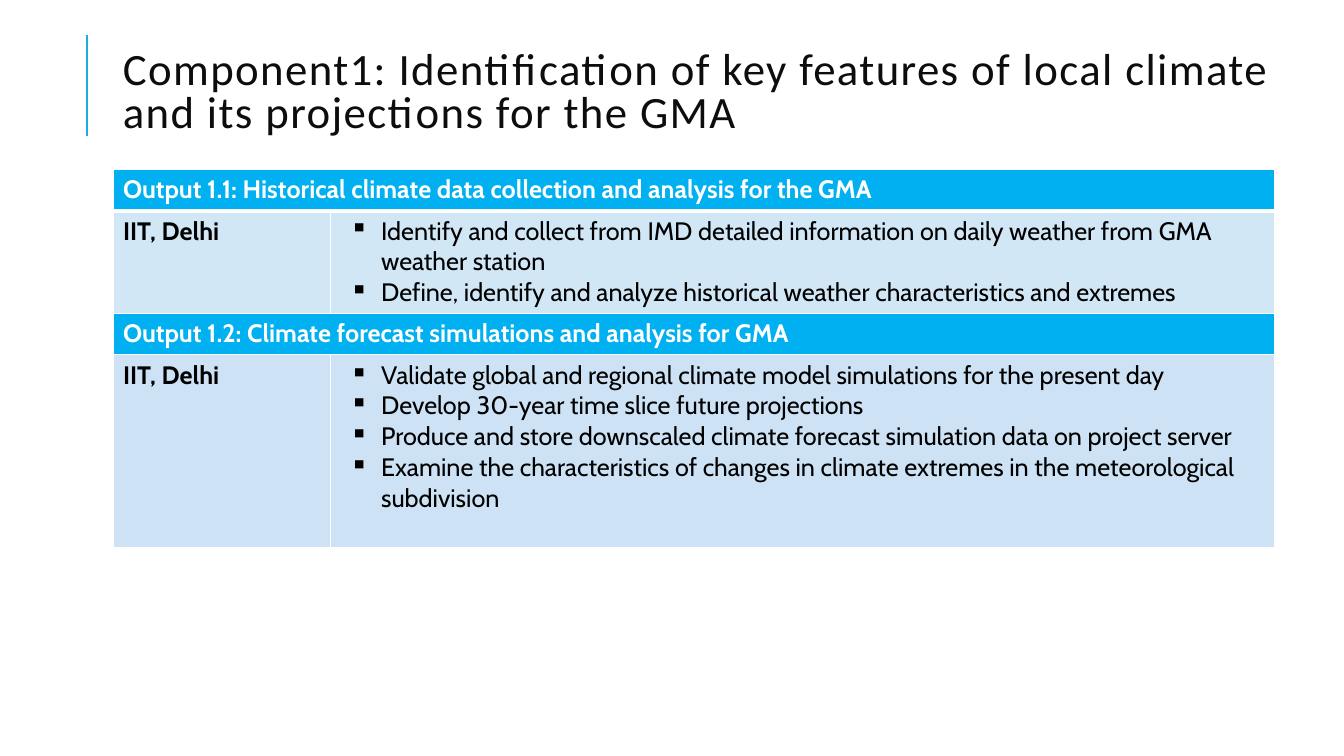
from lxml.etree import SubElement
from pptx import Presentation
from pptx.dml.color import RGBColor
from pptx.enum.shapes import MSO_CONNECTOR
from pptx.enum.text import MSO_ANCHOR
from pptx.oxml import parse_xml
from pptx.oxml.ns import nsdecls, qn
from pptx.util import Inches, Pt

COLORS = {
    "accent": "1CADE4",
    "title": "0D0D0D",
    "heading": "00B0F0",
    "history": "D1E7F6",
    "forecast": "CDE3F5",
    "body": "000000",
    "white": "FFFFFF",
}

TITLE = ("Component1: Identification of key features of local climate "
         "and its projections for the GMA")

# Heading, institution, activities, fill, heading height, activities height
OUTPUTS = [
    ("Output 1.1: Historical climate data collection and analysis for the GMA",
     "IIT, Delhi",
     ["Identify and collect from IMD detailed information on daily weather "
      "from GMA weather station",
      "Define, identify and analyze historical weather characteristics and extremes"],
     "history", 0.41, 1.02),
    ("Output 1.2: Climate forecast simulations and analysis for GMA",
     "IIT, Delhi",
     ["Validate global and regional climate model simulations for the present day",
      "Develop 30-year time slice future projections",
      "Produce and store downscaled climate forecast simulation data on project server",
      "Examine the characteristics of changes in climate extremes in the "
      "meteorological subdivision"],
     "forecast", 0.41, 1.91),
]


def rgb(name):
    return RGBColor.from_string(COLORS[name])


def add_run(paragraph, text, font_name, size, color, bold=False):
    run = paragraph.add_run()
    run.text = text
    run.font.name = font_name
    run.font.size = Pt(size)
    run.font.bold = bold
    run.font.color.rgb = rgb(color)
    return run


def add_bullet(paragraph):
    properties = paragraph._p.get_or_add_pPr()
    properties.set("marL", str(Inches(0.4)))
    properties.set("indent", str(Inches(-0.31)))
    SubElement(properties, qn("a:buChar")).set("char", "▪")


def style_cell(cell, fill, bottom_width=1):
    cell.fill.solid()
    cell.fill.fore_color.rgb = rgb(fill)
    properties = cell._tc.get_or_add_tcPr()
    for position, side in enumerate("LRTB"):
        width = Pt(bottom_width if side == "B" else 1)
        properties.insert(position, parse_xml(
            f'<a:ln{side} {nsdecls("a")} w="{width}"><a:solidFill>'
            f'<a:srgbClr val="{COLORS["white"]}"/></a:solidFill></a:ln{side}>'))


def add_title(slide, left, top, width, height):
    # Accent rule beside the title
    rule_x = left - Inches(0.26)
    rule = slide.shapes.add_connector(
        MSO_CONNECTOR.STRAIGHT, rule_x, top + Inches(1.13), rule_x, top + Inches(0.13))
    rule.line.color.rgb = rgb("accent")
    rule.line.width = Pt(1.5)
    SubElement(rule._element.spPr, qn("a:effectLst"))

    # Title text
    frame = slide.shapes.add_textbox(left, top, width, height).text_frame
    frame.word_wrap = True
    frame.vertical_anchor = MSO_ANCHOR.MIDDLE
    paragraph = frame.paragraphs[0]
    paragraph.line_spacing = 0.8
    run = add_run(paragraph, TITLE, "Calibri", 32, "title")
    run.font._element.set("spc", "100")


def add_outputs_table(slide, left, top, width, height):
    table = slide.shapes.add_table(
        2 * len(OUTPUTS), 2, left, top, width, height).table
    table.first_row = table.horz_banding = False
    table.columns[0].width = Inches(2.16)
    table.columns[1].width = width - Inches(2.16)

    for index, output in enumerate(OUTPUTS):
        heading, institution, activities, fill, heading_height, body_height = output
        heading_row, body_row = 2 * index, 2 * index + 1
        table.rows[heading_row].height = Inches(heading_height)
        table.rows[body_row].height = Inches(body_height)

        # Heading across both columns
        for column in range(2):
            style_cell(table.cell(heading_row, column), "heading",
                       3 if index == 0 else 1)
            style_cell(table.cell(body_row, column), fill)
        heading_cell = table.cell(heading_row, 0)
        heading_cell.merge(table.cell(heading_row, 1))
        add_run(heading_cell.text_frame.paragraphs[0], heading,
                "Cabin", 18, "white", True)

        # Institution and its activities
        add_run(table.cell(body_row, 0).text_frame.paragraphs[0], institution,
                "Cabin", 18, "body", True)
        frame = table.cell(body_row, 1).text_frame
        for number, activity in enumerate(activities):
            paragraph = frame.add_paragraph() if number else frame.paragraphs[0]
            add_bullet(paragraph)
            add_run(paragraph, activity, "Cabin", 18, "body")


def main():
    presentation = Presentation()
    presentation.slide_width = Inches(13.33)
    presentation.slide_height = Inches(7.5)
    slide = presentation.slides.add_slide(presentation.slide_layouts[6])
    add_title(slide, Inches(1.12), Inches(0.22), Inches(11.8), Inches(1.43))
    add_outputs_table(slide, Inches(1.12), Inches(1.68), Inches(11.52), Inches(3.75))
    presentation.save("out.pptx")


if __name__ == "__main__":
    main()
